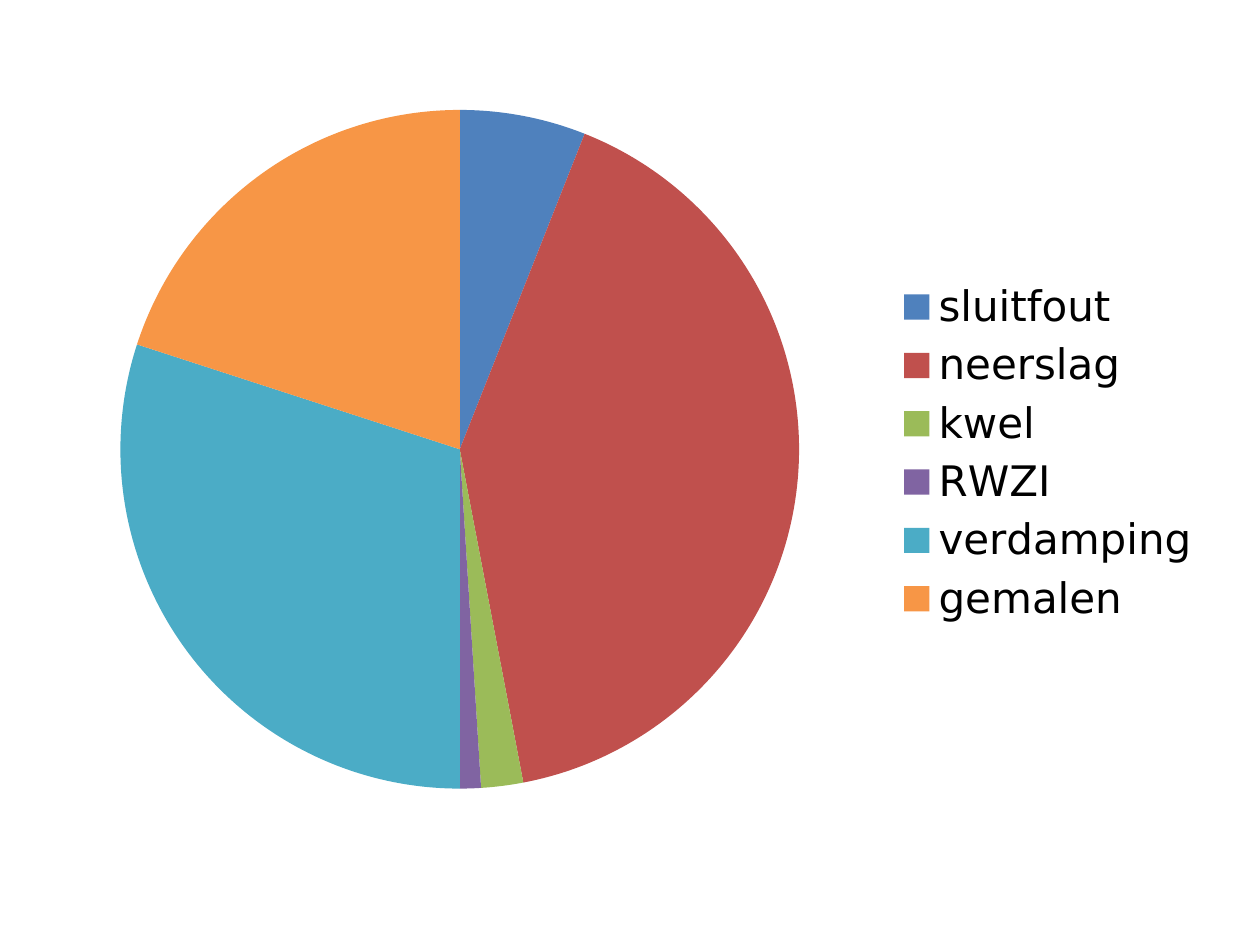
"""Build a slide with a pie chart of the terms of a water balance."""
from dataclasses import dataclass

from lxml import etree
from pptx import Presentation
from pptx.chart.data import CategoryChartData
from pptx.dml.color import RGBColor
from pptx.enum.chart import XL_CHART_TYPE as ChartType, XL_LEGEND_POSITION as LegendPosition
from pptx.oxml.ns import qn
from pptx.util import Inches, Pt


@dataclass(frozen=True)
class Theme:
    font: str = "DejaVu Sans"
    text: str = "000000"
    base_size: int = 10
    legend_size: int = 24


theme = Theme()
balance = [
    ("sluitfout", 6, "4F81BD"),
    ("neerslag", 41, "C0504D"),
    ("kwel", 2, "9BBB59"),
    ("RWZI", 1, "8064A2"),
    ("verdamping", 30, "4BACC6"),
    ("gemalen", 20, "F79646"),
]
pie_area = {"x": 0.08, "y": 0.02, "w": 0.57, "h": 0.95}

presentation = Presentation()
presentation.slide_width = Inches(10)
presentation.slide_height = Inches(7.5)
slide = presentation.slides.add_slide(presentation.slide_layouts[6])

balance_data = CategoryChartData()
balance_data.categories = [term for term, share, color in balance]
balance_data.add_series("Series 1", [share for term, share, color in balance])
balance_chart = slide.shapes.add_chart(
    ChartType.PIE, Inches(0.2), Inches(0.76), Inches(9.45), Inches(5.67), balance_data
).chart
balance_chart.has_title = False
balance_chart.font.name = theme.font
balance_chart.font.size = Pt(theme.base_size)
balance_chart.font.color.rgb = RGBColor.from_string(theme.text)

balance_chart.has_legend = True
legend = balance_chart.legend
legend.position = LegendPosition.RIGHT
legend.include_in_layout = False
legend.font.name = theme.font
legend.font.size = Pt(theme.legend_size)
legend.font.color.rgb = RGBColor.from_string(theme.text)

pie = balance_chart.plots[0]
pie.vary_by_categories = True
for index, (term, share, color) in enumerate(balance):
    slice_fill = pie.series[0].points[index].format.fill
    slice_fill.solid()
    slice_fill.fore_color.rgb = RGBColor.from_string(color)

plot_area = balance_chart.element.find(".//" + qn("c:plotArea"))
for automatic_layout in plot_area.findall(qn("c:layout")):
    plot_area.remove(automatic_layout)
layout = etree.Element(qn("c:layout"))
plot_area.insert(0, layout)
manual_layout = etree.SubElement(layout, qn("c:manualLayout"))
settings = {"layoutTarget": "inner", "xMode": "edge", "yMode": "edge", **pie_area}
for setting, value in settings.items():
    etree.SubElement(manual_layout, qn(f"c:{setting}")).set("val", str(value))

presentation.save("out.pptx")
